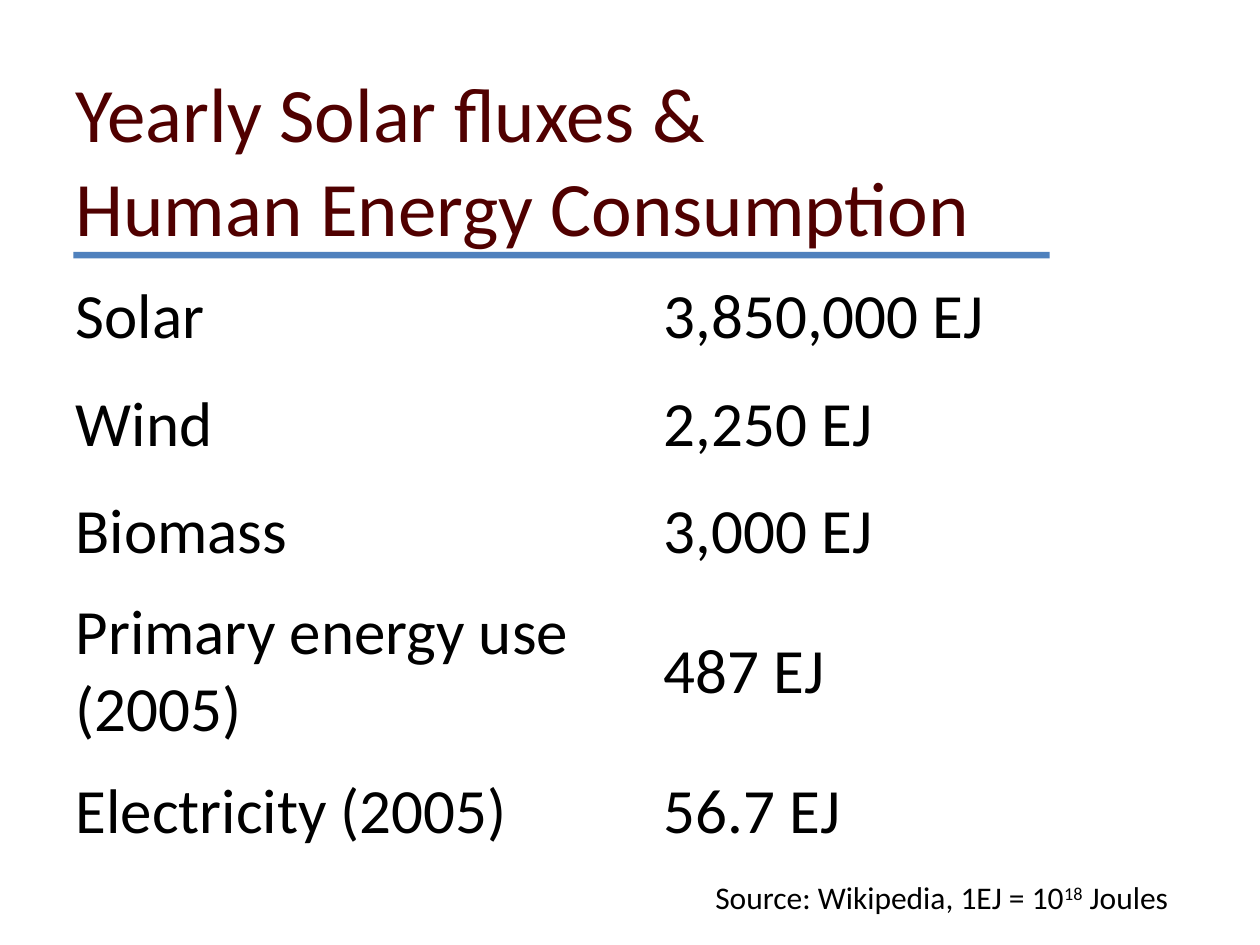
"""Build a slide comparing yearly solar fluxes with human energy consumption."""
from dataclasses import dataclass

from pptx import Presentation
from pptx.dml.color import RGBColor as Rgb
from pptx.enum.shapes import MSO_SHAPE as Shape
from pptx.enum.text import MSO_ANCHOR as Anchor, MSO_AUTO_SIZE as AutoSize
from pptx.util import Cm, Pt


@dataclass(frozen=True)
class Theme:
    font: str = "Calibri"
    title_color: str = "500000"
    text_color: str = "000000"
    rule_color: str = "4F81BD"
    title_size: int = 44
    body_size: int = 36
    source_size: int = 18


THEME = Theme()
TITLE = ["Yearly Solar fluxes &", "Human Energy Consumption"]
FLUXES = [
    ("Solar", "3,850,000 EJ"),
    ("Wind", "2,250 EJ"),
    ("Biomass", "3,000 EJ"),
    ("Primary energy use (2005)", "487 EJ"),
    ("Electricity (2005)", "56.7 EJ"),
]
SOURCE = [("Source: Wikipedia, 1EJ = 10", 0), ("18", 30000), (" Joules", 0)]
COLUMN_WIDTH = 11.86
SINGLE_ROW, DOUBLE_ROW = 2.16, 3.48
ROW_HEIGHTS = [DOUBLE_ROW, SINGLE_ROW, SINGLE_ROW, SINGLE_ROW, DOUBLE_ROW, SINGLE_ROW]


def add_text(para, text, *, size, color=THEME.text_color, baseline=0):
    span = para.add_run()
    span.text = text
    span.font.name = THEME.font
    span.font.size = Pt(size)
    span.font.bold = False
    span.font.color.rgb = Rgb.from_string(color)
    if baseline:
        span._r.get_or_add_rPr().set("baseline", str(baseline))


def add_flux_table(page):
    frame = page.shapes.add_table(
        len(ROW_HEIGHTS), 2, Cm(1.27), Cm(1.27), Cm(2 * COLUMN_WIDTH), Cm(sum(ROW_HEIGHTS))
    )
    table = frame.table
    table.first_row = table.horz_banding = False
    for column in table.columns:
        column.width = Cm(COLUMN_WIDTH)
    for row, height in zip(table.rows, ROW_HEIGHTS):
        row.height = Cm(height)
    for cell in table.iter_cells():
        cell.fill.background()
        cell.vertical_anchor = Anchor.MIDDLE

    heading = table.cell(0, 0)
    heading.merge(table.cell(0, 1))
    heading.text_frame.add_paragraph()
    for para, line in zip(heading.text_frame.paragraphs, TITLE):
        add_text(para, line, size=THEME.title_size, color=THEME.title_color)

    for row, flux in enumerate(FLUXES, start=1):
        for column, text in enumerate(flux):
            para = table.cell(row, column).text_frame.paragraphs[0]
            add_text(para, text, size=THEME.body_size)


def add_source(page):
    box = page.shapes.add_textbox(Cm(14.17), Cm(17.58), Cm(10.03), Cm(1.02))
    box.text_frame.word_wrap = False
    box.text_frame.auto_size = AutoSize.SHAPE_TO_FIT_TEXT
    for text, baseline in SOURCE:
        add_text(box.text_frame.paragraphs[0], text, size=THEME.source_size, baseline=baseline)


def add_title_rule(page):
    rule = page.shapes.add_shape(Shape.RECTANGLE, Cm(1.48), Cm(5.08), Cm(19.68), Cm(0.13))
    rule.shadow.inherit = False
    rule.fill.solid()
    rule.fill.fore_color.rgb = Rgb.from_string(THEME.rule_color)
    rule.line.fill.background()


def main():
    deck = Presentation()
    deck.slide_width, deck.slide_height = Cm(25.4), Cm(19.05)
    page = deck.slides.add_slide(deck.slide_layouts[6])
    add_flux_table(page)
    add_source(page)
    add_title_rule(page)
    deck.save("out.pptx")


if __name__ == "__main__":
    main()
